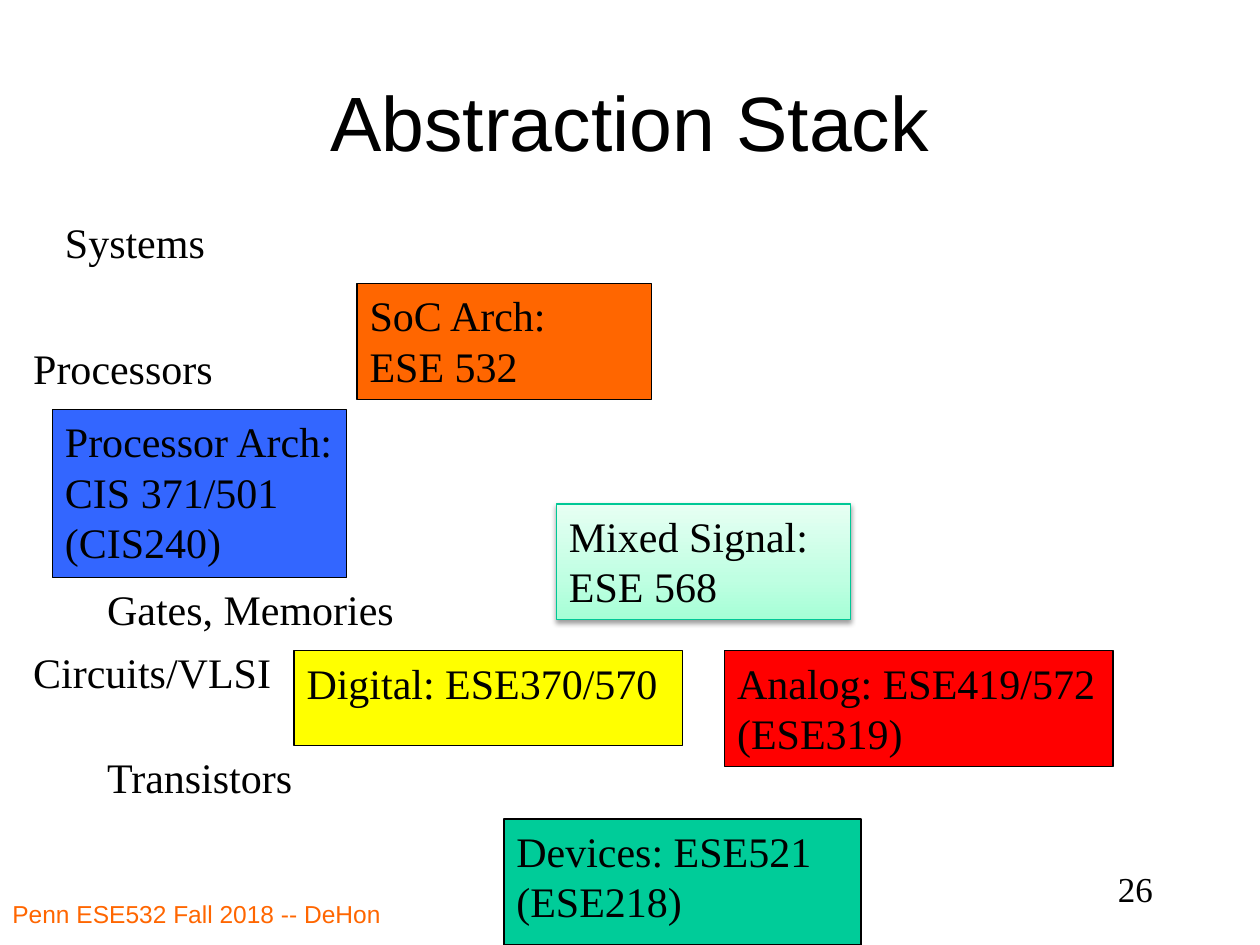
import pptx
import pptx.dml.color
import pptx.enum.shapes
import pptx.enum.text
import pptx.oxml.ns
import pptx.util
from lxml import etree

Cm = pptx.util.Cm
Pt = pptx.util.Pt
ALIGN = pptx.enum.text.PP_ALIGN
ANCHOR = pptx.enum.text.MSO_ANCHOR
BLACK = "000000"


def color(hex_text):
    return pptx.dml.color.RGBColor.from_string(hex_text)


def add_node(parent, tag, **attributes):
    return etree.SubElement(parent, pptx.oxml.ns.qn(tag), attributes)


class StackSlide:
    """Holds the text style and the page being drawn."""

    serif = "Times New Roman"
    sans = "Arial"
    body_size = 24

    def __init__(self, deck):
        self.page = deck.slides.add_slide(deck.slide_layouts[6])

    def fill_text(self, shape, text, size, font, ink, align, anchor, wrap):
        frame = shape.text_frame
        frame.text = text
        frame.word_wrap = wrap
        frame.vertical_anchor = anchor
        for para in frame.paragraphs:
            para.alignment = align
            for span in para.runs:
                span.font.size = Pt(size)
                span.font.name = font
                span.font.color.rgb = color(ink)

    def text(self, text, place, size=body_size, font=serif, ink=BLACK,
             align=ALIGN.LEFT, anchor=ANCHOR.TOP, wrap=True):
        box = self.page.shapes.add_textbox(*map(Cm, place))
        self.fill_text(box, text, size, font, ink, align, anchor, wrap)
        return box

    def layer(self, text, left, top, width):
        box = self.text(text, (left, top, width, 1.27), wrap=False)
        box.text_frame.auto_size = pptx.enum.text.MSO_AUTO_SIZE.SHAPE_TO_FIT_TEXT

    def course(self, text, place, fill=None, line=BLACK):
        box = self.page.shapes.add_shape(
            pptx.enum.shapes.MSO_SHAPE.RECTANGLE, *map(Cm, place))
        box.shadow.inherit = False
        if fill:
            box.fill.solid()
            box.fill.fore_color.rgb = color(fill)
        box.line.color.rgb = color(line)
        box.line.width = Pt(0.75)
        self.fill_text(box, text, self.body_size, self.serif, BLACK,
                       ALIGN.LEFT, ANCHOR.TOP, True)
        return box

    def glossy_course(self, text, place, stops, line):
        """Course box with an upward gradient and a soft shadow below."""
        box = self.course(text, place, line=line)
        box.fill.gradient()
        box.fill.gradient_angle = 90
        properties = box.element.spPr
        stop_list = properties.find(".//" + pptx.oxml.ns.qn("a:gsLst"))
        for stop in list(stop_list):
            stop_list.remove(stop)
        for percent, shade in stops:
            stop = add_node(stop_list, "a:gs", pos=str(percent * 1000))
            add_node(stop, "a:srgbClr", val=shade)
        effects = properties.find(pptx.oxml.ns.qn("a:effectLst"))
        shadow = add_node(effects, "a:outerShdw", blurRad=str(Pt(3.1)),
                          dist=str(Pt(1.6)), dir="5400000", rotWithShape="0")
        add_node(add_node(shadow, "a:srgbClr", val=BLACK), "a:alpha", val="38000")


def main():
    deck = pptx.Presentation()
    deck.slide_width, deck.slide_height = Cm(25.4), Cm(19.05)
    slide = StackSlide(deck)

    slide.text("Abstraction Stack", (1.91, 0.85, 21.59, 3.18), 44, slide.sans,
               align=ALIGN.CENTER, anchor=ANCHOR.MIDDLE)
    slide.text("Penn ESE532 Fall 2018 -- DeHon", (0, 17.99, 11.64, 1.06), 14,
               slide.sans, "FF6600")
    slide.text("26", (18.2, 17.36, 5.29, 1.27), 20, align=ALIGN.RIGHT)

    narrow, wide, two_lines = 5.93, 7.83, 2.33
    circuits_top = 13.12
    courses = [
        ("Devices: ESE521\n(ESE218)", (10.16, 16.51, 7.2, 2.54), "00CC99"),
        ("Digital: ESE370/570", (5.93, circuits_top, wide, 1.91), "FFFF00"),
        ("Analog: ESE419/572\n(ESE319)",
         (14.61, circuits_top, wide, two_lines), "FF0000"),
        ("Processor Arch:\nCIS 371/501\n(CIS240)",
         (1.06, 8.26, narrow, 3.39), "3366FF"),
        ("SoC Arch:\nESE 532", (7.2, 5.72, narrow, two_lines), "FF6600"),
    ]
    for text, place, fill in courses:
        slide.course(text, place, fill)
    slide.glossy_course("Mixed Signal:\nESE 568",
                        (11.22, 10.16, narrow, two_lines),
                        [(0, "A5FFD6"), (35, "BFFFE2"), (100, "E7FFF3")],
                        "00C896")

    layers = [
        ("Circuits/VLSI", 0.42, 12.91, 5.36),
        ("Transistors", 1.91, 15.03, 4.29),
        ("Gates, Memories", 1.91, 11.64, 6.35),
        ("Processors", 0.42, 6.77, 4.17),
        ("Systems", 1.06, 4.23, 3.35),
    ]
    for layer in layers:
        slide.layer(*layer)

    deck.save("out.pptx")


if __name__ == "__main__":
    main()
